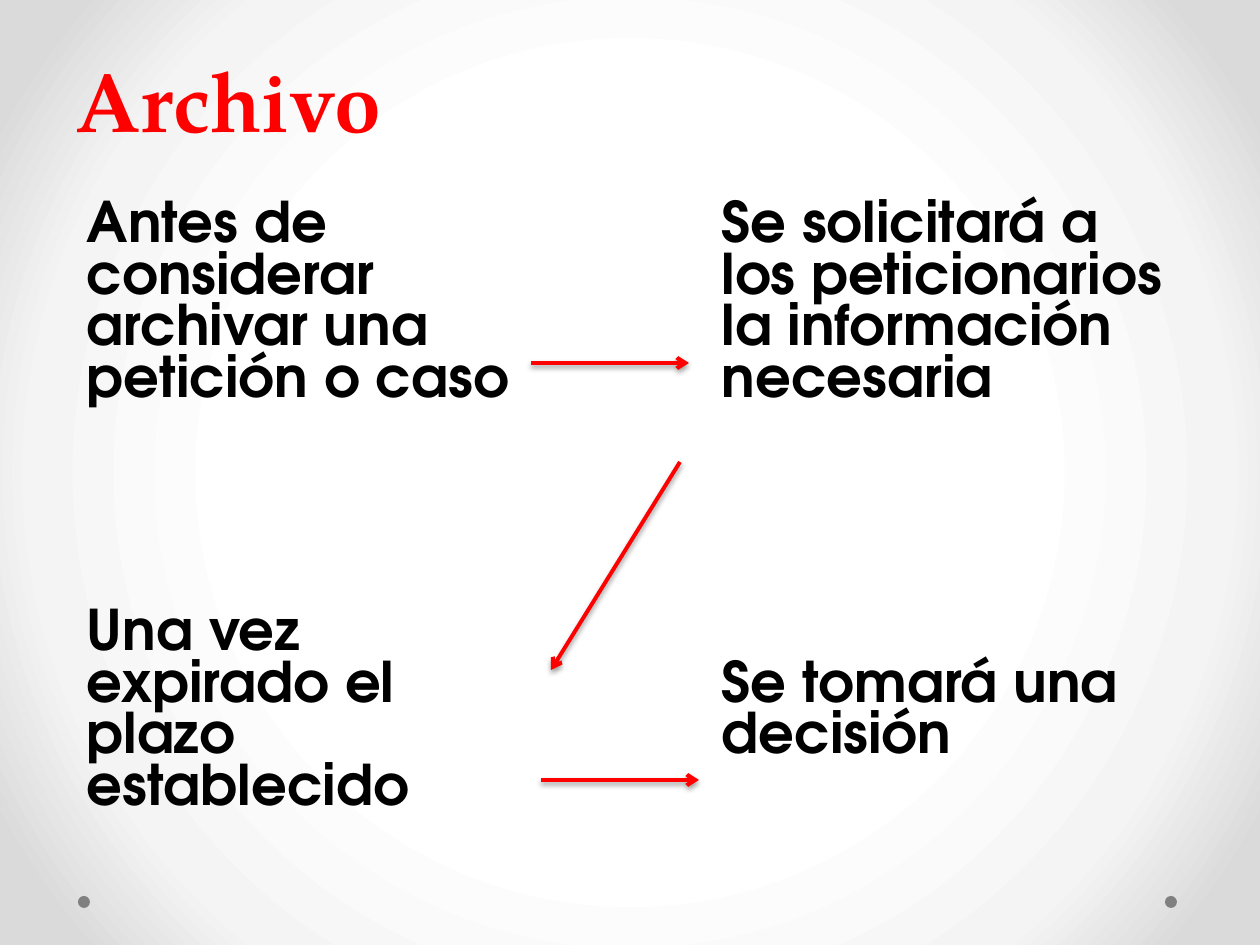
from lxml import etree
from pptx import Presentation
from pptx.dml.color import RGBColor
from pptx.enum.shapes import MSO_CONNECTOR, MSO_SHAPE
from pptx.enum.text import MSO_ANCHOR
from pptx.oxml import parse_xml
from pptx.oxml.ns import nsdecls, qn
from pptx.util import Emu, Pt

COLORS = {"accent": "FF0000", "text": "000000", "dot": "808080",
          "center": "FFFFFF", "middle": "F4F4F4", "edge": "DADADA"}
NO_STYLE_NO_GRID = "{2D5ABB26-0587-4C30-8999-92F81FD0307C}"


def px(n):
    return Emu(round(n * 914400 / 126))


def set_font(p, name, size, color):
    p.font.name, p.font.size, p.font.bold = name, Pt(size), True
    p.font.color.rgb = RGBColor.from_string(COLORS[color])


prs = Presentation()
prs.slide_width, prs.slide_height = px(1260), px(945)
s = prs.slides.add_slide(prs.slide_layouts[6])

# Radial background
stops = "".join(f'<a:gs pos="{pos}000"><a:srgbClr val="{COLORS[name]}"/></a:gs>'
                for pos, name in ((50, "center"), (76, "middle"), (92, "edge")))
s.element.cSld.insert(0, parse_xml(
    f'<p:bg {nsdecls("p", "a")}><p:bgPr><a:gradFill rotWithShape="1">'
    f'<a:gsLst>{stops}</a:gsLst><a:path path="circle">'
    '<a:fillToRect l="50000" t="50000" r="50000" b="50000"/></a:path>'
    '</a:gradFill><a:effectLst/></p:bgPr></p:bg>'))

# Footer dots
for left in (1165, 78):
    dot = s.shapes.add_shape(MSO_SHAPE.OVAL, px(left), px(896), px(12), px(12))
    dot.shadow.inherit = False
    dot.fill.solid()
    dot.fill.fore_color.rgb = RGBColor.from_string(COLORS["dot"])
    dot.line.fill.background()

# Title
tf = s.shapes.add_textbox(px(63), 0, px(1134), px(155)).text_frame
tf.word_wrap = True
tf.vertical_anchor = MSO_ANCHOR.BOTTOM
p = tf.paragraphs[0]
p.text = "Archivo"
p.line_spacing = Pt(58)
set_font(p, "TeX Gyre Pagella", 48, "accent")

# Steps, with an empty middle column for the arrows
steps = (
    ("Antes de considerar archivar una petición o caso", "",
     "Se solicitará a los peticionarios la información necesaria"),
    ("Una vez expirado el plazo establecido", "", "Se tomará una decisión"),
)
table = s.shapes.add_table(2, 3, px(74), px(195), px(1111), px(785)).table
table.first_row = table.horz_banding = False
table._tbl.tblPr.find(qn("a:tableStyleId")).text = NO_STYLE_NO_GRID
for column, width in zip(table.columns, (486, 149, 476)):
    column.width = px(width)
for row, height, texts in zip(table.rows, (408, 377), steps):
    row.height = px(height)
    for cell, text in zip(row.cells, texts):
        cell.fill.background()
        p = cell.text_frame.paragraphs[0]
        p.text = text
        set_font(p, "TeX Gyre Adventor", 32, "text")
table.cell(1, 2).margin_top = px(58)  # one line lower than its neighbour

# Arrows from step to step
for x1, y1, x2, y2 in ((531, 363, 689, 363), (680, 462, 551, 670), (541, 780, 699, 780)):
    arrow = s.shapes.add_connector(MSO_CONNECTOR.STRAIGHT, px(x1), px(y1), px(x2), px(y2))
    arrow.line.width = Pt(2.25)
    arrow.line.color.rgb = RGBColor.from_string(COLORS["accent"])
    etree.SubElement(arrow.line._get_or_add_ln(), qn("a:tailEnd"), type="arrow")
    arrow._element.spPr.append(parse_xml(
        f'<a:effectLst {nsdecls("a")}>'
        '<a:outerShdw blurRad="40000" dist="20000" dir="5400000" rotWithShape="0">'
        f'<a:srgbClr val="{COLORS["text"]}"><a:alpha val="38000"/></a:srgbClr>'
        '</a:outerShdw></a:effectLst>'))

prs.save("out.pptx")
